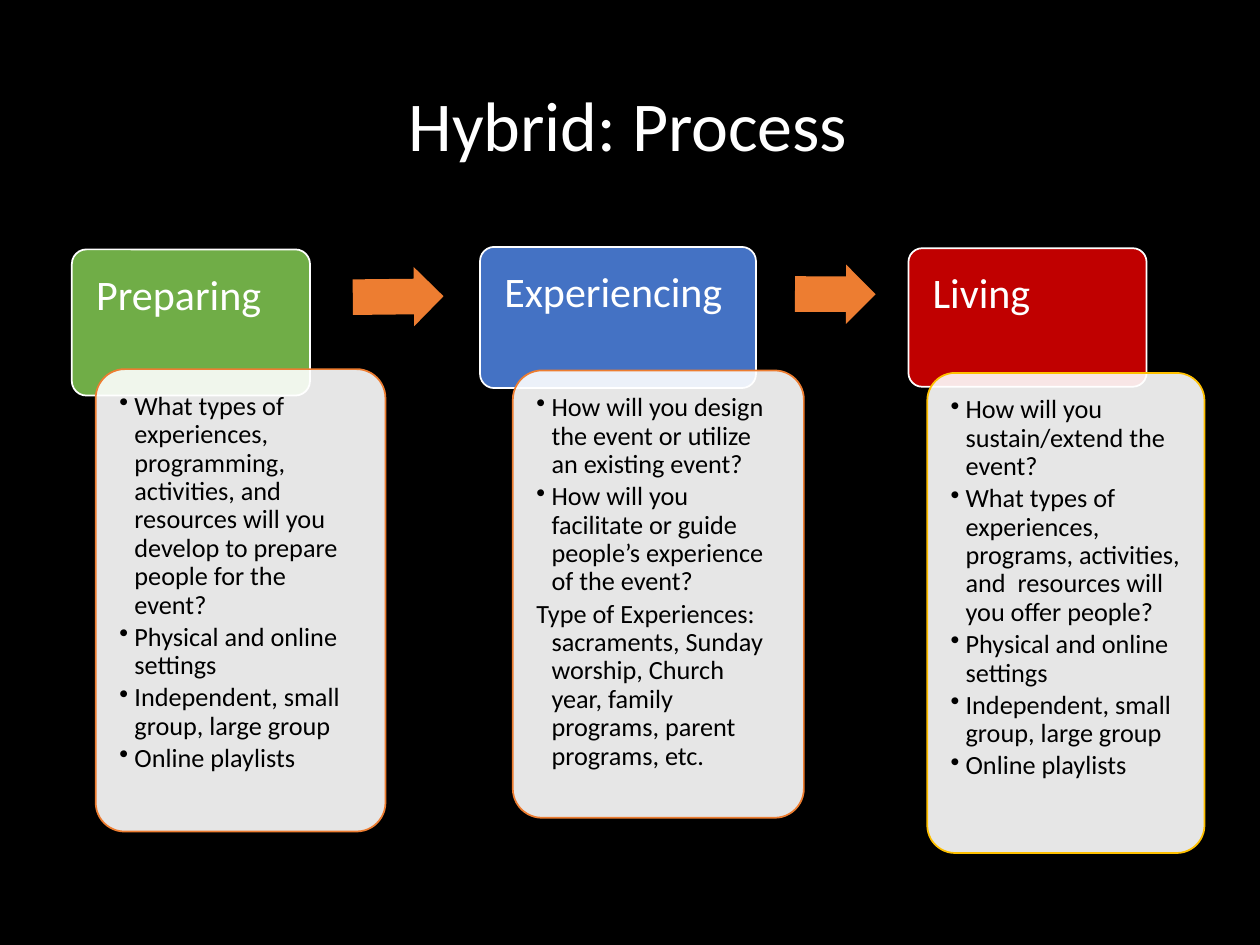
from dataclasses import dataclass

from lxml.etree import SubElement
from pptx import Presentation
from pptx.dml.color import RGBColor
from pptx.enum.shapes import MSO_SHAPE
from pptx.enum.text import MSO_ANCHOR, MSO_AUTO_SIZE, PP_ALIGN
from pptx.oxml.ns import qn
from pptx.util import Inches, Pt


@dataclass(frozen=True)
class Theme:
    font: str = "Calibri"
    black: RGBColor = RGBColor(0x00, 0x00, 0x00)
    white: RGBColor = RGBColor(0xFF, 0xFF, 0xFF)
    green: RGBColor = RGBColor(0x70, 0xAD, 0x47)
    blue: RGBColor = RGBColor(0x44, 0x72, 0xC4)
    red: RGBColor = RGBColor(0xC0, 0x00, 0x00)
    orange: RGBColor = RGBColor(0xED, 0x7D, 0x31)
    gold: RGBColor = RGBColor(0xFF, 0xC0, 0x00)
    title: Pt = Pt(40)
    heading: Pt = Pt(24)
    body: Pt = Pt(15)


T = Theme()

SETTINGS = ["Physical and online settings", "Independent, small group, large group",
            "Online playlists"]

STAGES = [
    dict(heading="Preparing", fill=T.green, border=T.orange,
         header_box=(0.57, 1.98, 1.89, 1.16), card_box=(0.76, 2.93, 2.3, 3.67),
         bullets=["What types of experiences, programming, activities, and resources "
                  "will you develop to prepare people for the event?", *SETTINGS]),
    dict(heading="Experiencing", fill=T.blue, border=T.orange,
         header_box=(3.81, 1.96, 2.19, 1.12), card_box=(4.07, 2.94, 2.31, 3.55),
         bullets=["How will you design the event or utilize an existing event?",
                  "How will you facilitate or guide people’s experience of the event?"],
         closing="Type of Experiences: sacraments, Sunday worship, Church year, "
                 "family programs, parent programs, etc."),
    dict(heading="Living", fill=T.red, border=T.gold,
         header_box=(7.21, 1.97, 1.89, 1.1), card_box=(7.36, 2.96, 2.2, 3.81),
         bullets=["How will you sustain/extend the event?",
                  "What types of experiences, programs, activities, and  resources "
                  "will you offer people?", *SETTINGS]),
]

ARROWS = [((2.8, 2.12, 0.72, 0.47), -0.6), ((6.31, 2.1, 0.64, 0.47), 0.2)]


def set_attrs(obj, **values):
    for name, value in values.items():
        setattr(obj, name, value)


def place(sp, box):
    names = ("left", "top", "width", "height")
    set_attrs(sp, **{n: Inches(v) for n, v in zip(names, box)})


def paint(sp, fill, line=None):
    sp.fill.solid()
    sp.fill.fore_color.rgb = fill
    if line is None:
        sp.line.fill.background()
    else:
        sp.line.color.rgb = line
        sp.line.width = Pt(1)


def write(p, text, size, color, **layout):
    set_attrs(p, line_spacing=0.9, **layout)
    r = p.add_run()
    r.text = text
    set_attrs(r.font, name=T.font, size=size)
    r.font.color.rgb = color


def add_block(s, kind, box, fill, line=None):
    sp = s.shapes.add_shape(kind, *map(Inches, box))
    sp.shadow.inherit = False
    paint(sp, fill, line)
    return sp


def add_panel(s, box, fill, line, insets):
    sp = add_block(s, MSO_SHAPE.ROUNDED_RECTANGLE, box, fill, line)
    sp.adjustments[0] = 0.1
    sides = ("margin_left", "margin_top", "margin_right", "margin_bottom")
    set_attrs(sp.text_frame, word_wrap=True, vertical_anchor=MSO_ANCHOR.TOP,
              **{n: Inches(v) for n, v in zip(sides, insets)})
    return sp


def add_title(s, box):
    sp = s.shapes.title
    place(sp, box)
    paint(sp, T.black)
    tf = sp.text_frame
    set_attrs(tf, word_wrap=True, auto_size=MSO_AUTO_SIZE.NONE,
              vertical_anchor=MSO_ANCHOR.BOTTOM)
    write(tf.paragraphs[0], "Hybrid: Process", T.title, T.white,
          alignment=PP_ALIGN.CENTER)


def add_header(s, box, heading, fill):
    sp = add_panel(s, box, fill, T.white, (0.16, 0.16, 0.16, 0.1))
    write(sp.text_frame.paragraphs[0], heading, T.heading, T.white,
          alignment=PP_ALIGN.LEFT)


def add_card(s, box, border, bullets, closing=None):
    sp = add_panel(s, box, T.white, border, (0.12,) * 4)
    color = sp.fill._xPr.find(qn("a:solidFill"))[0]
    SubElement(color, qn("a:alpha"), val="90000")
    tf = sp.text_frame
    items = [(text, True) for text in bullets]
    if closing:
        items.append((closing, False))
    for i, (text, bulleted) in enumerate(items):
        p = tf.add_paragraph() if i else tf.paragraphs[0]
        pPr = p._p.get_or_add_pPr()
        pPr.set("marL", str(Inches(0.12)))
        pPr.set("indent", str(-Inches(0.12)))
        if bulleted:
            SubElement(pPr, qn("a:buChar"), char="•")
        else:
            SubElement(pPr, qn("a:buNone"))
        write(p, text, T.body, T.black, level=1, alignment=PP_ALIGN.LEFT,
              space_after=Pt(2.25))


def add_stage(s, header_box, card_box, heading, fill, border, bullets, closing=None):
    add_header(s, header_box, heading, fill)
    add_card(s, card_box, border, bullets, closing)


def add_arrow(s, box, rotation):
    sp = add_block(s, MSO_SHAPE.RIGHT_ARROW, box, T.orange)
    sp.adjustments[0] = 0.6
    sp.rotation = rotation


def main():
    prs = Presentation()
    set_attrs(prs, slide_width=Inches(10), slide_height=Inches(7.5))
    s = prs.slides.add_slide(prs.slide_layouts[5])
    s.background.fill.solid()
    s.background.fill.fore_color.rgb = T.black
    add_title(s, (0.45, 0.59, 9.07, 0.78))
    for stage in STAGES:
        add_stage(s, **stage)
    for box, rotation in ARROWS:
        add_arrow(s, box, rotation)
    prs.save("out.pptx")


if __name__ == "__main__":
    main()
